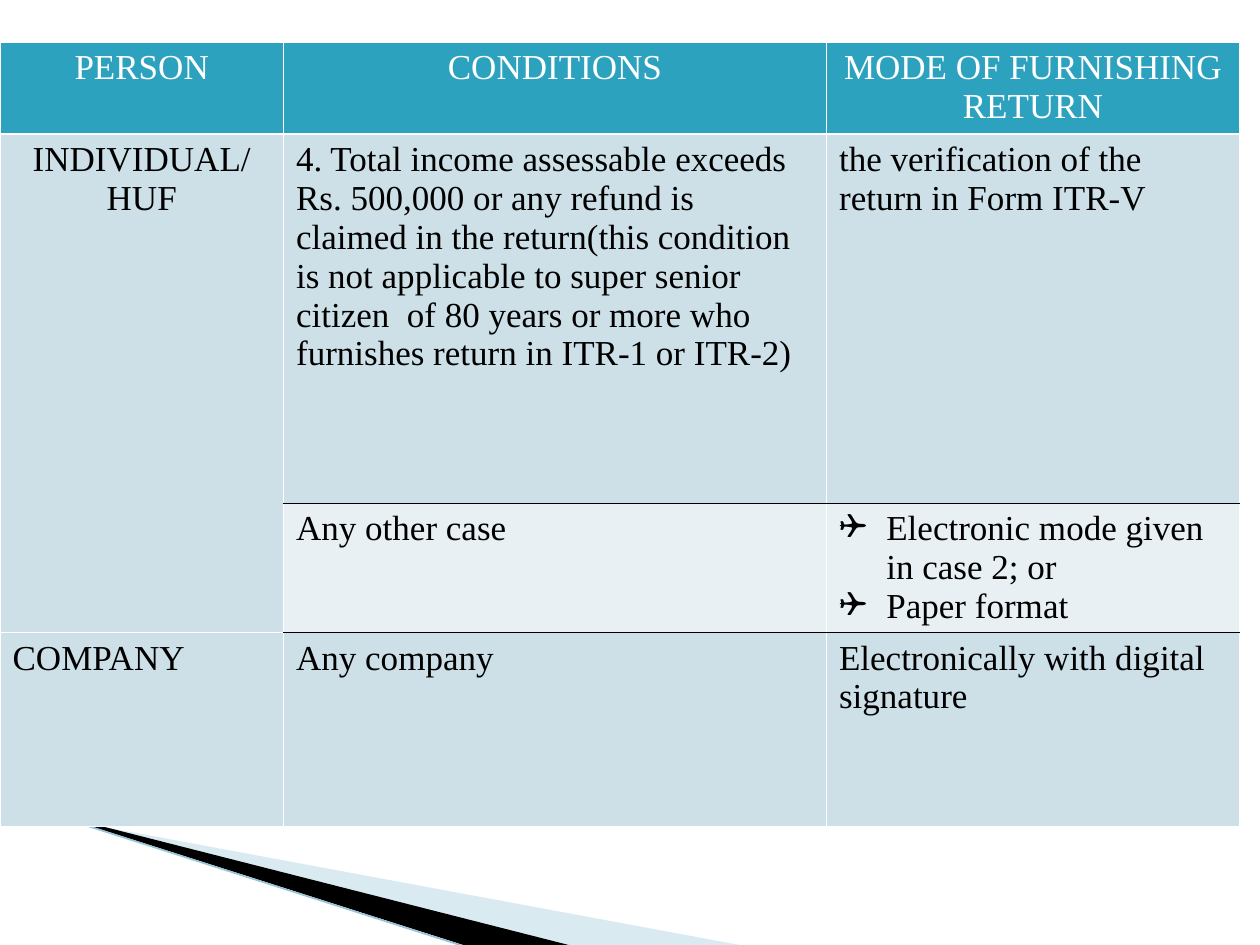
from dataclasses import dataclass

from lxml.etree import SubElement
from pptx import Presentation
from pptx.dml.color import RGBColor
from pptx.enum.shapes import MSO_CONNECTOR
from pptx.enum.text import PP_ALIGN
from pptx.oxml import parse_xml
from pptx.oxml.ns import nsdecls, qn
from pptx.util import Pt


@dataclass(frozen=True)
class Theme:
    font: str = "Times New Roman"
    size: int = 20
    white: str = "FFFFFF"
    black: str = "000000"
    header: str = "2DA2BF"
    band: str = "CDE0E8"
    light_band: str = "E8F0F4"
    wedge: str = "A0CBDC"
    edge: str = "97C5D8"
    border: float = 1
    edge_width: float = 0.95


@dataclass(frozen=True)
class Box:
    left: float
    top: float
    width: float
    height: float


THEME = Theme()
COLUMN_WIDTHS = (162, 310.3, 236)
ROW_HEIGHTS = (52.6, 211, 70, 110.9)
ROW_FILLS = (THEME.header, THEME.band, THEME.light_band, THEME.band)
OTHER_CASE_ROW = 2
ROWS = (
    ("PERSON", "CONDITIONS", "MODE OF FURNISHING RETURN"),
    ("INDIVIDUAL/ HUF",
     "4. Total income assessable exceeds Rs. 500,000 or any refund is claimed "
     "in the return(this condition is not applicable to super senior citizen  "
     "of 80 years or more who furnishes return in ITR-1 or ITR-2)",
     "the verification of the return in Form ITR-V"),
    ("", "Any other case",
     ("Electronic mode given in case 2; or", "Paper format")),
    ("COMPANY", "Any company", "Electronically with digital signature"),
)


def add_bullet(para, indent=27):
    properties = para._p.get_or_add_pPr()
    properties.set("marL", str(Pt(indent)))
    properties.set("indent", str(-Pt(indent)))
    SubElement(properties, qn("a:buFont"), typeface="Wingdings")
    SubElement(properties, qn("a:buChar"), char="❑")


def write_text(frame, text, color=THEME.black, align=PP_ALIGN.LEFT):
    """Write one paragraph, or a bulleted one for each item of a tuple."""
    bulleted = isinstance(text, tuple)
    for index, line in enumerate(text if bulleted else (text,)):
        para = frame.add_paragraph() if index else frame.paragraphs[0]
        para.alignment = align
        if bulleted:
            add_bullet(para)
        span = para.add_run()
        span.text = line
        span.font.name = THEME.font
        span.font.size = Pt(THEME.size)
        span.font.color.rgb = RGBColor.from_string(color)


def set_borders(cell, top, bottom):
    """Draw white sides, with the given colours above and below."""
    sides = {"lnL": THEME.white, "lnR": THEME.white, "lnT": top, "lnB": bottom}
    properties = cell._tc.get_or_add_tcPr()
    for index, (side, color) in enumerate(sides.items()):
        properties.insert(index, parse_xml(
            f'<a:{side} {nsdecls("a")} w="{Pt(THEME.border)}"><a:solidFill>'
            f'<a:srgbClr val="{color}"/></a:solidFill></a:{side}>'))


def add_return_table(page, box):
    table = page.shapes.add_table(
        len(ROWS), len(COLUMN_WIDTHS), Pt(box.left), Pt(box.top),
        Pt(box.width), Pt(box.height)).table
    table.first_row = table.horz_banding = False
    for column, width in zip(table.columns, COLUMN_WIDTHS):
        column.width = Pt(width)
    for row, height in zip(table.rows, ROW_HEIGHTS):
        row.height = Pt(height)
    table.cell(1, 0).merge(table.cell(OTHER_CASE_ROW, 0))

    for row, texts in enumerate(ROWS):
        for column, text in enumerate(texts):
            cell = table.cell(row, column)
            fill = THEME.band if row and column == 0 else ROW_FILLS[row]
            cell.fill.solid()
            cell.fill.fore_color.rgb = RGBColor.from_string(fill)
            # Black rules frame the "other case" row beside the merged cell.
            top, bottom = (
                THEME.black if column and edge in (OTHER_CASE_ROW, OTHER_CASE_ROW + 1)
                else THEME.white for edge in (row, row + 1))
            set_borders(cell, top, bottom)
            if text:
                centred = row == 0 or (row, column) == (1, 0)
                write_text(cell.text_frame, text,
                           color=THEME.black if row else THEME.white,
                           align=PP_ALIGN.CENTER if centred else PP_ALIGN.LEFT)


def add_wedge(page, box, points, color, opacity=100):
    placed = [(box.left + x, box.top + y) for x, y in points]
    builder = page.shapes.build_freeform(*placed[0], scale=Pt(1))
    builder.add_line_segments(placed[1:], close=True)
    wedge = builder.convert_to_shape()
    wedge.shadow.inherit = False
    wedge.line.fill.background()
    wedge.fill.solid()
    wedge.fill.fore_color.rgb = RGBColor.from_string(color)
    if opacity < 100:
        color_node = wedge._element.spPr.find(f".//{qn('a:srgbClr')}")
        SubElement(color_node, qn("a:alpha"), val=str(opacity * 1000))


def add_corner_sweep(page, box):
    add_wedge(page, box, ((39.6, 12.7), (428.4, 84.7), (328.3, 84.7), (39.6, 12)),
              THEME.wedge, opacity=40)
    add_wedge(page, box, ((38.2, 11.3), (329, 84.7), (267.8, 85.4), (38.9, 12)),
              THEME.black)
    edge = page.shapes.add_connector(
        MSO_CONNECTOR.STRAIGHT, Pt(box.left), Pt(box.top),
        Pt(box.left + 267.1), Pt(box.top + 85.4))
    edge.line.color.rgb = RGBColor.from_string(THEME.edge)
    edge.line.width = Pt(THEME.edge_width)
    SubElement(edge._element.spPr, qn("a:effectLst"))


def main():
    deck = Presentation()
    deck.slide_width, deck.slide_height = Pt(720), Pt(540)
    page = deck.slides.add_slide(deck.slide_layouts[6])
    add_corner_sweep(page, Box(0, 456, 428.4, 84))
    add_return_table(page, Box(0, 24, sum(COLUMN_WIDTHS), sum(ROW_HEIGHTS)))
    deck.save("out.pptx")


if __name__ == "__main__":
    main()
